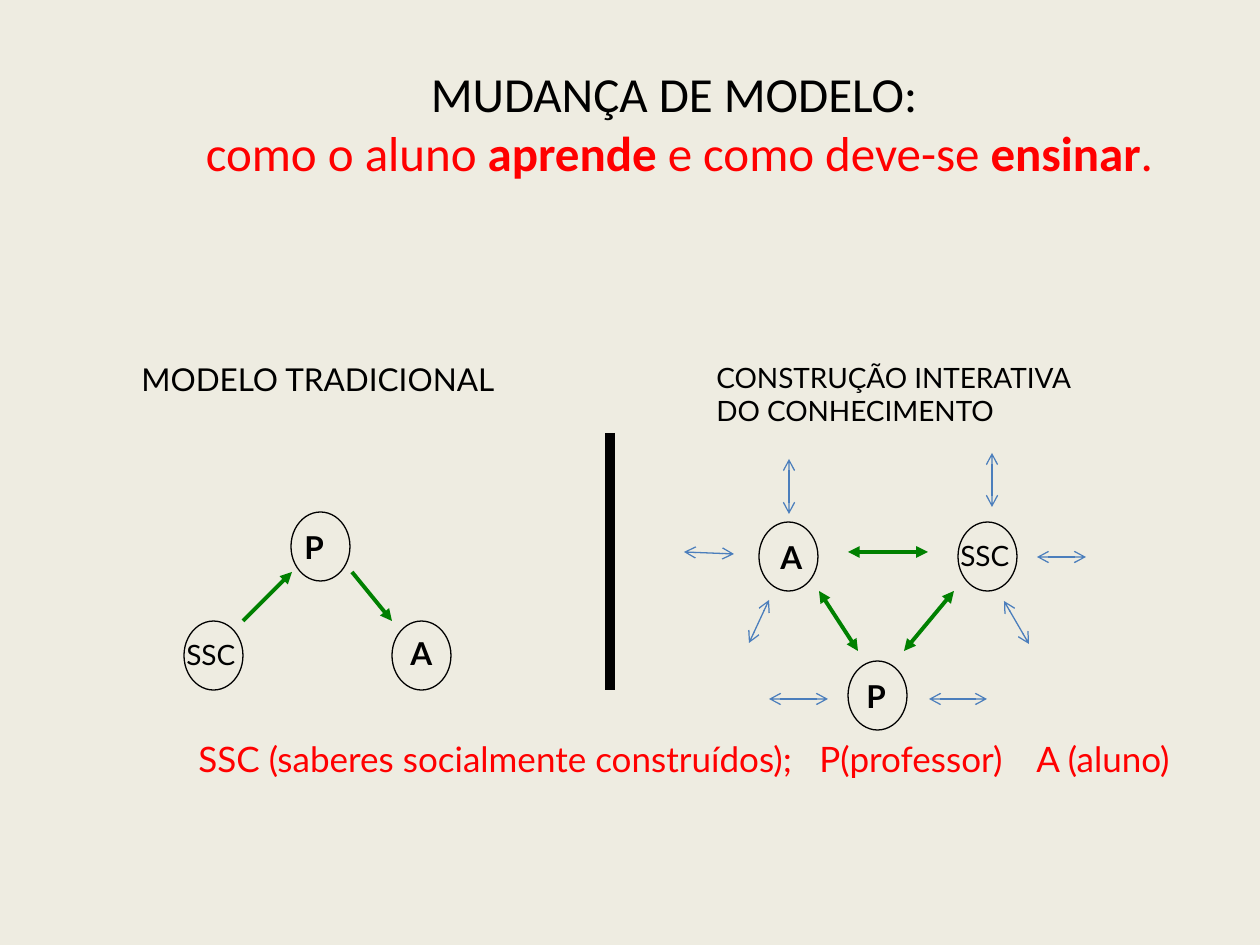
from lxml.etree import SubElement
from pptx import Presentation
from pptx.dml.color import RGBColor
from pptx.enum.shapes import MSO_CONNECTOR as Connector, MSO_SHAPE as Shape
from pptx.enum.text import MSO_ANCHOR as Anchor, PP_ALIGN as Align
from pptx.oxml.ns import qn
from pptx.util import Emu, Pt

COLORS = {
    "paper": "EEECE1",
    "ink": "000000",
    "accent": "FF0000",
    "flow": "008000",
    "outside": "4B7EBC",
}


class Diagram:
    SCALE = 914400 / 126  # EMU in one px
    CIRCLE = (59, 69)

    def __init__(self, page):
        self.page = page
        self.page.background.fill.solid()
        self.page.background.fill.fore_color.rgb = self.color("paper")

    @classmethod
    def px(cls, *lengths):
        return [Emu(round(length * cls.SCALE)) for length in lengths]

    @staticmethod
    def color(name):
        return RGBColor.from_string(COLORS[name])

    def style(self, font, size, color="ink", bold=False, face="Lato"):
        font.name, font.size, font.bold = face, Pt(size), bold
        font.color.rgb = self.color(color)

    def box(self, left, top, width, height):
        box = self.page.shapes.add_textbox(*self.px(left, top, width, height))
        box.text_frame.word_wrap = True
        return box.text_frame

    def title(self, area, heading, spans):
        frame = self.box(*area)
        frame.vertical_anchor = Anchor.MIDDLE
        para = frame.paragraphs[0]
        para.alignment = Align.CENTER
        span = para.add_run()
        span.text = heading
        self.style(span.font, 28, face="Calibri")
        para.add_line_break()
        for text, bold in spans:
            span = para.add_run()
            span.text = text
            self.style(span.font, 28, "accent", bold, "Calibri")

    def text(self, area, text, size, color="ink", bold=False, tabs=()):
        para = self.box(*area).paragraphs[0]
        para.text = text
        self.style(para.font, size, color, bold)
        if tabs:
            # Tab stops come before the default run properties
            properties = para._p.get_or_add_pPr()
            stops = SubElement(properties, qn("a:tabLst"))
            properties.insert(0, stops)
            for position in self.px(*tabs):
                SubElement(stops, qn("a:tab"), pos=str(position), algn="l")

    def circle(self, left, top):
        circle = self.page.shapes.add_shape(
            Shape.OVAL, *self.px(left, top, *self.CIRCLE))
        circle.shadow.inherit = False
        circle.fill.background()
        circle.line.color.rgb = self.color("ink")
        circle.line.width = Pt(0.75)

    def line(self, points, color, width, head=None, tail=None):
        line = self.page.shapes.add_connector(
            Connector.STRAIGHT, *self.px(*points))
        line.line.color.rgb = self.color(color)
        line.line.width = Pt(width)
        outline = line.line._get_or_add_ln()
        for tag, kind in (("a:headEnd", head), ("a:tailEnd", tail)):
            if kind:
                SubElement(outline, qn(tag), type=kind)
        SubElement(line._element.spPr, qn("a:effectLst"))


def main():
    deck = Presentation()
    deck.slide_width, deck.slide_height = Diagram.px(1260, 945)
    diagram = Diagram(deck.slides.add_slide(deck.slide_layouts[6]))

    # Title
    diagram.title((129, 37, 1101, 171), "MUDANÇA DE MODELO: ", [
        ("como o aluno ", False), ("aprende", True),
        (" e como deve-se ", False), ("ensinar", True), (".", False)])

    # Headings of the two models and the bar between them
    diagram.text((129, 354, 427, 50), "MODELO TRADICIONAL", 18)
    diagram.text((704, 354, 407, 81),
                 "CONSTRUÇÃO INTERATIVA DO CONHECIMENTO", 16)
    diagram.line((610, 433, 610, 690), "ink", 6)

    # Actors: circle corner, label area, label
    actors = [
        ((291, 512), (292, 522, 49, 50), "P"),
        ((392, 621), (398, 628, 49, 50), "A"),
        ((184, 621), (174, 631, 89, 47), "SSC"),
        ((848, 661), (854, 671, 59, 50), "P"),
        ((958, 522), (948, 532, 89, 47), "SSC"),
        ((759, 522), (768, 532, 69, 50), "A"),
    ]
    for corner, area, label in actors:
        single = len(label) == 1
        diagram.circle(*corner)
        diagram.text(area, label, 18 if single else 16, bold=single)

    # Traditional model: one-way flow
    for points in [(243, 621, 292, 572), (352, 572, 392, 621)]:
        diagram.line(points, "flow", 2.25, tail="triangle")

    # Interactive model: two-way flow between the actors
    for points in [(848, 552, 928, 552), (819, 591, 858, 651),
                   (904, 651, 954, 591)]:
        diagram.line(points, "flow", 2.25, "triangle", "triangle")

    # Exchange with the outside
    for points in [(769, 600, 749, 643), (1004, 601, 1029, 644),
                   (1037, 557, 1086, 557), (992, 507, 992, 453),
                   (789, 514, 789, 459), (828, 699, 769, 699),
                   (929, 699, 987, 699), (684, 552, 734, 554)]:
        diagram.line(points, "outside", 0.75, "arrow", "arrow")

    # Legend
    diagram.text((186, 731, 1039, 55),
                 "SSC (saberes socialmente construídos);\tP(professor)\tA (aluno)",
                 20, "accent", tabs=(621, 838))

    deck.save("out.pptx")


if __name__ == "__main__":
    main()
